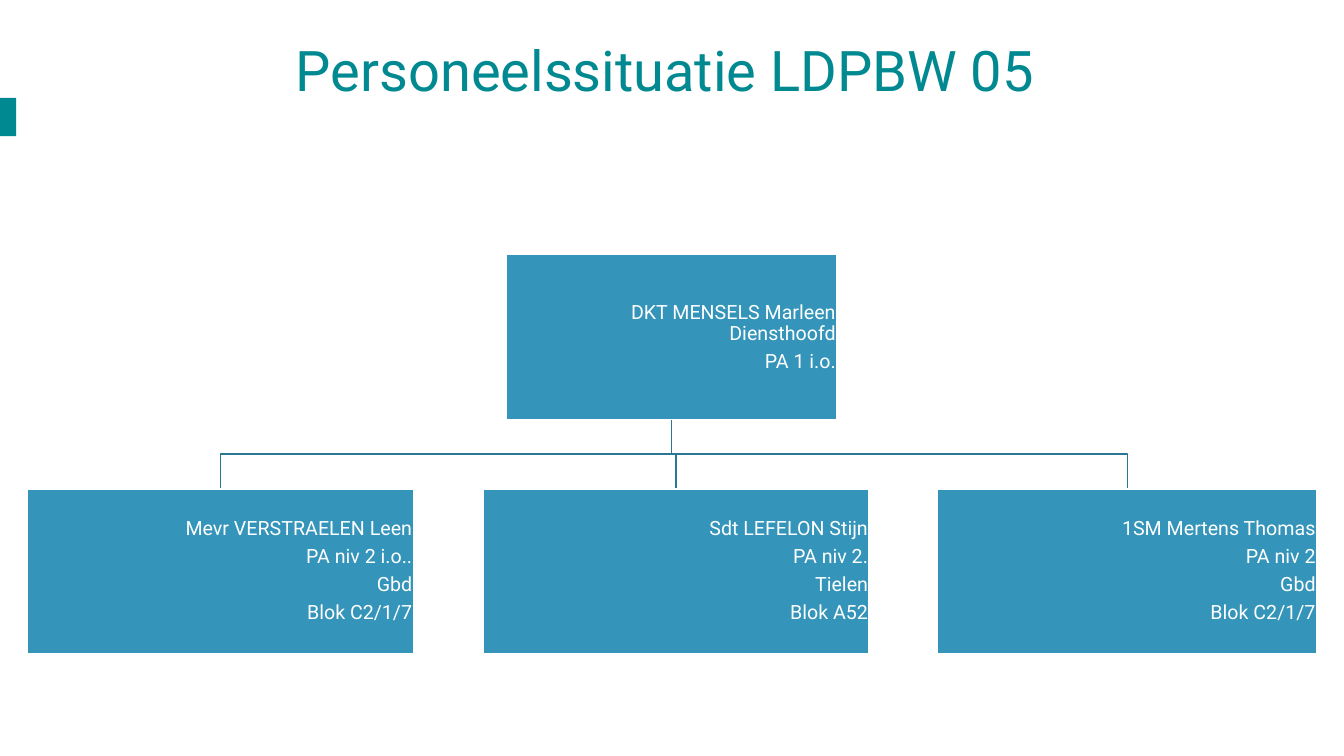
from dataclasses import dataclass

from pptx import Presentation
from pptx.dml.color import RGBColor
from pptx.enum.shapes import MSO_SHAPE
from pptx.enum.text import MSO_ANCHOR, PP_ALIGN
from pptx.shapes.autoshape import Shape
from pptx.slide import Slide
from pptx.util import Inches, Pt

RECTANGLE = MSO_SHAPE.RECTANGLE
MIDDLE = MSO_ANCHOR.MIDDLE
CENTER, RIGHT = PP_ALIGN.CENTER, PP_ALIGN.RIGHT

TEAL = RGBColor(0x00, 0x89, 0x90)
BLUE = RGBColor(0x34, 0x94, 0xBA)
DARK_BLUE = RGBColor(0x2A, 0x77, 0x95)
WHITE = RGBColor(0xFF, 0xFF, 0xFF)

FONT = "Roboto"
CARD_HEIGHT = 1.64
HEAD_TOP = 2.52
STAFF_TOP = 4.85


@dataclass(frozen=True)
class Person:
    left: float
    top: float
    width: float
    lines: tuple[str, ...]
    first_line_tight: bool = False

    @property
    def center(self) -> float:
        return self.left + self.width / 2

    @property
    def bottom(self) -> float:
        return self.top + CARD_HEIGHT


HEAD = Person(5.02, HEAD_TOP, 3.28,
              ("DKT MENSELS Marleen", "Diensthoofd", "PA 1 i.o."),
              first_line_tight=True)
STAFF = (
    Person(0.27, STAFF_TOP, 3.83,
           ("Mevr VERSTRAELEN Leen", "PA niv 2 i.o..", "Gbd", "Blok C2/1/7")),
    Person(4.79, STAFF_TOP, 3.83,
           ("Sdt LEFELON Stijn", "PA niv 2.", "Tielen", "Blok A52")),
    Person(9.3, STAFF_TOP, 3.76,
           ("1SM Mertens Thomas", "PA niv 2", "Gbd", "Blok C2/1/7")),
)


def write_text(shape: Shape, lines: tuple[str, ...], *, size: float,
               color: RGBColor, align: PP_ALIGN, space_after: float = 0) -> None:
    frame = shape.text_frame
    frame.word_wrap = True
    frame.vertical_anchor = MIDDLE
    for index, line in enumerate(lines):
        paragraph = frame.add_paragraph() if index else frame.paragraphs[0]
        paragraph.text = line
        paragraph.alignment = align
        paragraph.line_spacing = 0.9
        paragraph.space_after = Pt(space_after)
        paragraph.font.name = FONT
        paragraph.font.size = Pt(size)
        paragraph.font.color.rgb = color


def add_block(slide: Slide, left: float, top: float, width: float,
              height: float, fill: RGBColor) -> Shape:
    block = slide.shapes.add_shape(RECTANGLE, Inches(left), Inches(top),
                                   Inches(width), Inches(height))
    block.shadow.inherit = False
    block.fill.solid()
    block.fill.fore_color.rgb = fill
    block.line.fill.background()
    return block


def add_person(slide: Slide, person: Person) -> None:
    card = add_block(slide, person.left, person.top, person.width,
                     CARD_HEIGHT, BLUE)
    card.line.color.rgb = WHITE
    card.line.width = Pt(1)
    frame = card.text_frame
    frame.margin_left = frame.margin_right = Inches(0.01)
    frame.margin_top = frame.margin_bottom = Inches(0.01)
    write_text(card, person.lines, size=14, color=WHITE, align=RIGHT,
               space_after=4.9)
    if person.first_line_tight:
        frame.paragraphs[0].line_spacing = 1.0
        frame.paragraphs[0].space_after = Pt(0)


def add_branch(slide: Slide, head: Person, member: Person) -> None:
    """Draw the stepped line from the head's card down to a member's card."""
    bend = (head.bottom + member.top) / 2
    builder = slide.shapes.build_freeform(Inches(head.center),
                                          Inches(head.bottom))
    corners = ((head.center, bend), (member.center, bend),
               (member.center, member.top))
    builder.add_line_segments([(Inches(x), Inches(y)) for x, y in corners],
                              close=False)
    branch = builder.convert_to_shape()
    branch.shadow.inherit = False
    branch.fill.background()
    branch.line.color.rgb = DARK_BLUE
    branch.line.width = Pt(1)


def main() -> None:
    presentation = Presentation()
    presentation.slide_width = Inches(13.33)
    presentation.slide_height = Inches(7.5)
    slide = presentation.slides.add_slide(presentation.slide_layouts[6])

    add_block(slide, 0, 0.97, 0.16, 0.38, TEAL)
    title = slide.shapes.add_textbox(Inches(0.27), Inches(0.15),
                                     Inches(12.65), Inches(1.16))
    write_text(title, ("Personeelssituatie LDPBW 05",), size=40, color=TEAL,
               align=CENTER)

    for member in reversed(STAFF):
        add_branch(slide, HEAD, member)
    for person in (HEAD, *STAFF):
        add_person(slide, person)

    presentation.save("out.pptx")


if __name__ == "__main__":
    main()
